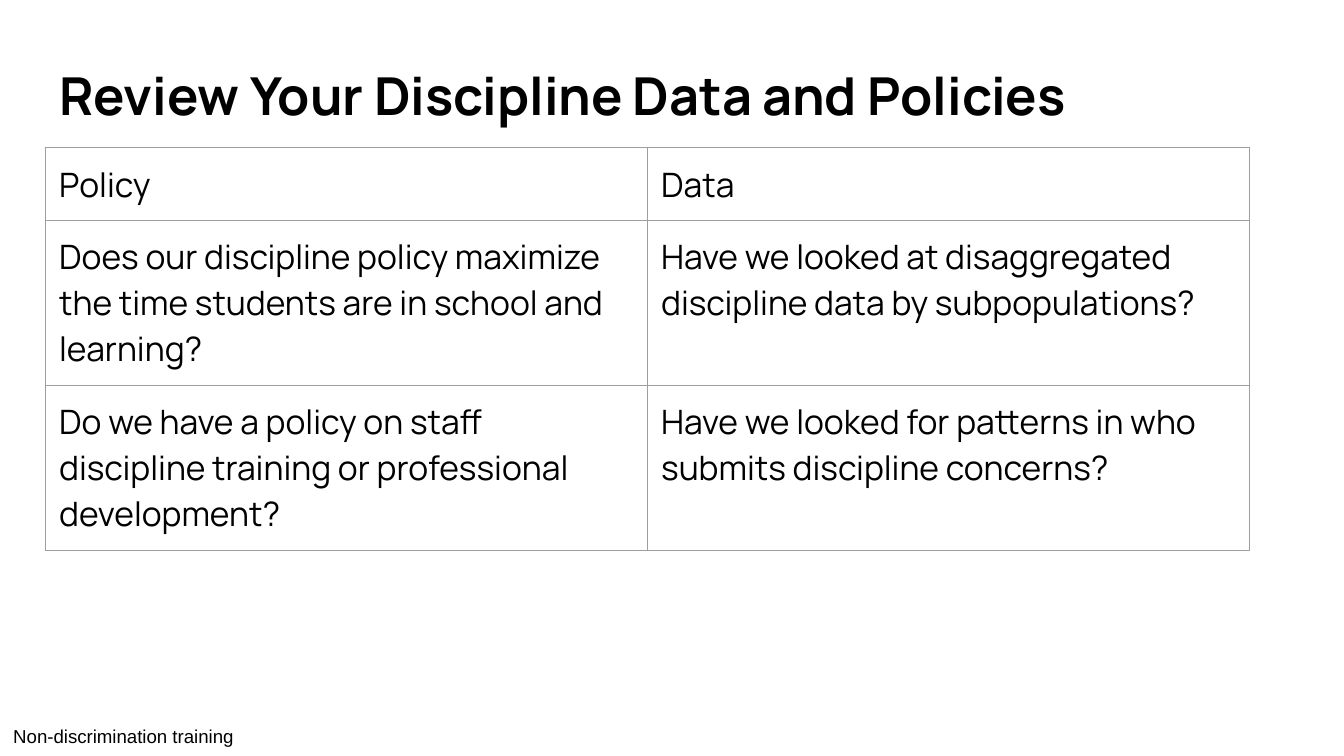
from lxml.etree import SubElement
from pptx import Presentation
from pptx.dml.color import RGBColor
from pptx.enum.text import MSO_ANCHOR, MSO_AUTO_SIZE, PP_ALIGN
from pptx.oxml.ns import qn
from pptx.util import Pt

TITLE = "Review Your Discipline Data and Policies"
FOOTER = "Non-discrimination training"
QUESTIONS = [
    ("Policy", "Data"),
    (
        "Does our discipline policy maximize the time students are in school and learning?",
        "Have we looked at disaggregated discipline data by subpopulations?",
    ),
    (
        "Do we have a policy on staff discipline training or professional development?",
        "Have we looked for patterns in who submits discipline concerns?",
    ),
]

BLACK = RGBColor(0x00, 0x00, 0x00)
WHITE = RGBColor(0xFF, 0xFF, 0xFF)
BORDER_GRAY = RGBColor(0x9E, 0x9E, 0x9E)
HEADING_FONT = "Manrope"
FOOTER_FONT = "Arial"

MARGIN = Pt(7.2)
LEFT = Pt(24.5)
COLUMN_WIDTH = Pt(322.5)
ROW_HEIGHT = Pt(30.25)  # rows grow to fit their text
BORDER_WIDTH = Pt(0.75)


def set_margins(target):
    """Give a text frame or a table cell the same inset on all sides."""
    target.margin_left = target.margin_right = MARGIN
    target.margin_top = target.margin_bottom = MARGIN


def write_text(text_frame, text, font_name, size, bold=False):
    paragraph = text_frame.paragraphs[0]
    paragraph.alignment = PP_ALIGN.LEFT
    run = paragraph.add_run()
    run.text = text
    run.font.name = font_name
    run.font.size = Pt(size)
    run.font.bold = bold
    run.font.color.rgb = BLACK


def format_box(shape):
    text_frame = shape.text_frame
    set_margins(text_frame)
    text_frame.word_wrap = True
    text_frame.auto_size = MSO_AUTO_SIZE.NONE
    text_frame.vertical_anchor = MSO_ANCHOR.TOP
    return text_frame


def add_borders(cell):
    properties = cell._tc.get_or_add_tcPr()
    for position, side in enumerate(("lnL", "lnR", "lnT", "lnB")):
        line = SubElement(properties, qn(f"a:{side}"), w=str(BORDER_WIDTH))
        fill = SubElement(line, qn("a:solidFill"))
        SubElement(fill, qn("a:srgbClr"), val=str(BORDER_GRAY))
        properties.insert(position, line)


def add_title(slide):
    title = slide.shapes.title
    title.left, title.top = LEFT, Pt(26.65)
    title.width, title.height = Pt(671), Pt(45.35)
    write_text(format_box(title), TITLE, HEADING_FONT, 28, bold=True)


def add_questions_table(slide):
    row_count, column_count = len(QUESTIONS), len(QUESTIONS[0])
    table = slide.shapes.add_table(
        row_count, column_count, LEFT, Pt(79.2),
        COLUMN_WIDTH * column_count, ROW_HEIGHT * row_count,
    ).table
    table.first_row = table.horz_banding = False
    for column in table.columns:
        column.width = COLUMN_WIDTH
    for row, texts in zip(table.rows, QUESTIONS):
        row.height = ROW_HEIGHT
        for cell, text in zip(row.cells, texts):
            set_margins(cell)
            cell.vertical_anchor = MSO_ANCHOR.TOP
            cell.fill.background()
            add_borders(cell)
            write_text(cell.text_frame, text, HEADING_FONT, 18)


def add_footer(slide):
    footer = slide.shapes.add_textbox(0, Pt(380.9), Pt(145.5), Pt(23.75))
    write_text(format_box(footer), FOOTER, FOOTER_FONT, 10)


def main():
    presentation = Presentation()
    presentation.slide_width, presentation.slide_height = Pt(720), Pt(405)
    title_only = presentation.slide_layouts[5]
    slide = presentation.slides.add_slide(title_only)
    slide.background.fill.solid()
    slide.background.fill.fore_color.rgb = WHITE
    add_footer(slide)
    add_title(slide)
    add_questions_table(slide)
    presentation.save("out.pptx")


if __name__ == "__main__":
    main()
